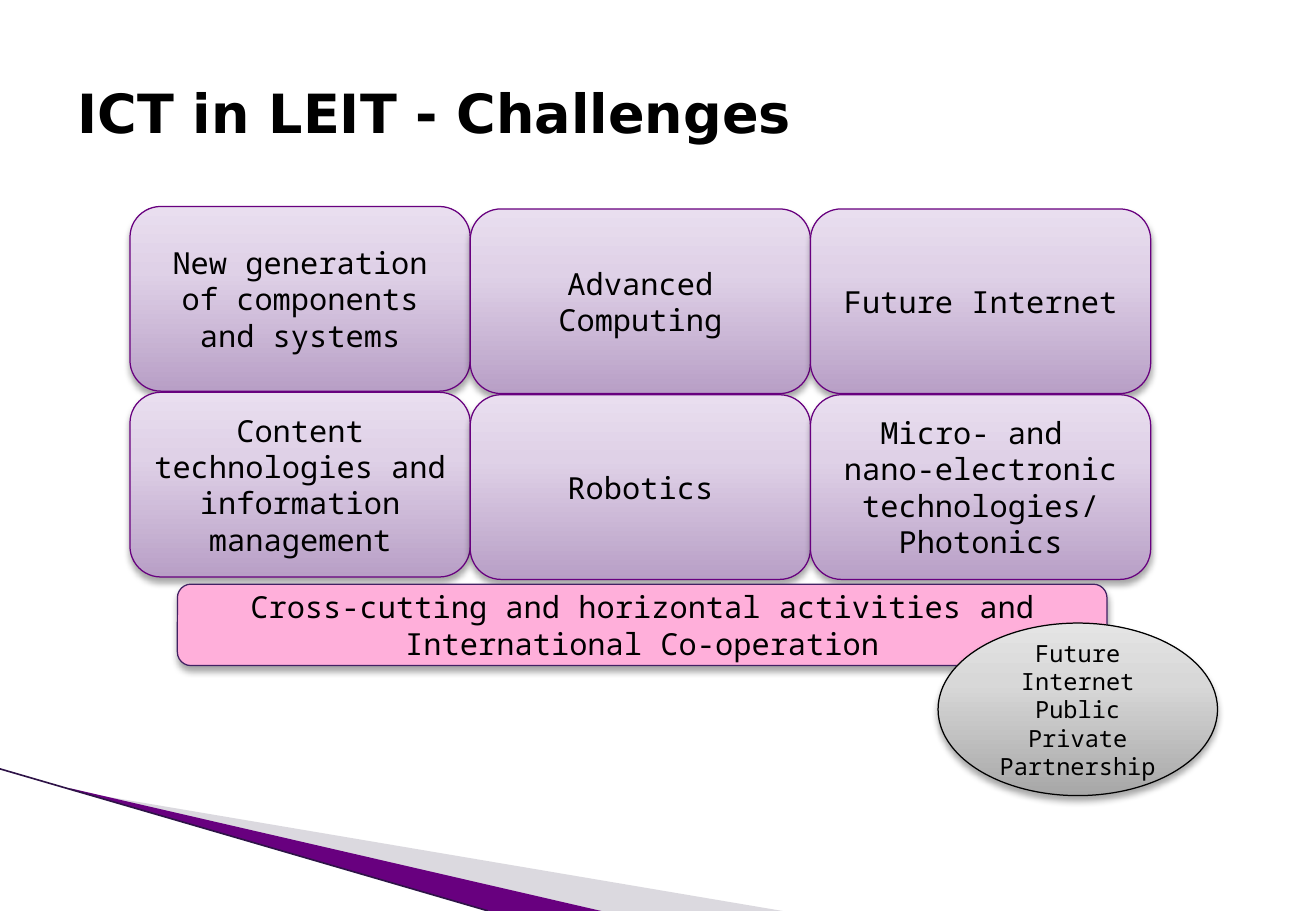
from pptx import Presentation
from pptx import util as u
from pptx.dml.color import RGBColor
from pptx.enum import shapes, text
from pptx.oxml import parse_xml
from pptx.oxml.ns import nsdecls, qn

COLORS = {"black": "000000", "purple": "68007F", "plum": "422163", "pink": "FFAFDA",
          "grey": "A7A2B1", "edge": "2E1347"}
LILAC = [(0, "B89FC6"), (65, "DFD1E7"), (100, "E9DEEF")]
SILVER = [(0, "A7A7A7"), (65, "D8D8D8"), (100, "E4E4E4")]
BODY = {"size": u.Pt(18), "name": "Noto Sans Mono"}
SMALL = {**BODY, "size": u.Pt(14)}
TITLE = {"size": u.Pt(32), "name": "DejaVu Sans", "bold": True}
ROUND = shapes.MSO_SHAPE.ROUNDED_RECTANGLE
OVAL = shapes.MSO_SHAPE.OVAL


class Deck:
    """Draws styled elements on the current slide."""

    def __init__(self, width, height):
        self.prs = Presentation()
        self.prs.slide_width, self.prs.slide_height = u.Inches(width), u.Inches(height)
        self.s = self.prs.slides.add_slide(self.prs.slide_layouts[6])

    def rgb(self, name):
        return RGBColor.from_string(COLORS[name])

    def add_text(self, sp, lines, fmt, align):
        tf = sp.text_frame
        tf.word_wrap = True
        tf.vertical_anchor = text.MSO_ANCHOR.MIDDLE
        for i, line in enumerate(lines):
            p = tf.add_paragraph() if i else tf.paragraphs[0]
            p.alignment = align
            r = p.add_run()
            r.text = line
            for key, value in fmt.items():
                setattr(r.font, key, value)
            r.font.color.rgb = self.rgb("black")

    def title(self, box, line):
        sp = self.s.shapes.add_textbox(*map(u.Inches, box))
        self.add_text(sp, [line], TITLE, text.PP_ALIGN.LEFT)

    def block(self, kind, box, lines, fill, line, fmt=BODY):
        sp = self.s.shapes.add_shape(kind, *map(u.Inches, box))
        if isinstance(fill, str):
            sp.fill.solid()
            sp.fill.fore_color.rgb = self.rgb(fill)
        else:
            self.gradient(sp, fill)
        sp.line.color.rgb = self.rgb(line)
        sp.line.width = u.Pt(0.75)
        self.drop_shadow(sp)
        self.add_text(sp, lines, fmt, text.PP_ALIGN.CENTER)

    def gradient(self, sp, stops):
        gs = "".join(f'<a:gs pos="{pos * 1000}"><a:srgbClr val="{c}"/></a:gs>' for pos, c in stops)
        sp._element.spPr.insert(2, parse_xml(
            f'<a:gradFill {nsdecls("a")} rotWithShape="1"><a:gsLst>{gs}</a:gsLst>'
            '<a:lin ang="16200000" scaled="0"/></a:gradFill>'))

    def drop_shadow(self, sp):
        sp.shadow.inherit = False
        sp._element.spPr.find(qn("a:effectLst")).append(parse_xml(
            f'<a:outerShdw {nsdecls("a")} blurRad="{u.Pt(4)}" dist="{u.Pt(3)}" dir="5400000" '
            'rotWithShape="0"><a:srgbClr val="000000"><a:alpha val="35000"/></a:srgbClr></a:outerShdw>'))

    def wedge(self, points, color, alpha=100):
        start, *rest = [tuple(map(u.Inches, pt)) for pt in points]
        fb = self.s.shapes.build_freeform(*start)
        fb.add_line_segments(rest, close=True)
        sp = fb.convert_to_shape()
        sp.fill.solid()
        sp.fill.fore_color.rgb = self.rgb(color)
        sp.line.fill.background()
        sp.shadow.inherit = False
        if alpha < 100:
            clr = sp._element.spPr.find(qn("a:solidFill"))[0]
            clr.append(parse_xml(f'<a:alpha {nsdecls("a")} val="{alpha * 1000}"/>'))

    def line(self, ends, color, width):
        cx = self.s.shapes.add_connector(shapes.MSO_CONNECTOR.STRAIGHT, *map(u.Inches, ends))
        cx.line.color.rgb = self.rgb(color)
        cx.line.width = u.Pt(width)
        cx._element.spPr.append(parse_xml(f'<a:effectLst {nsdecls("a")}/>'))


def main():
    d = Deck(10.83, 7.5)
    d.wedge([(0.59, 6.51), (6.44, 7.5), (4.94, 7.5), (0.59, 6.5)], "grey", 40)
    d.wedge([(0.58, 6.49), (4.95, 7.5), (4.03, 7.5), (0.58, 6.5)], "purple")
    d.line((0, 6.33, 4.02, 7.5), "edge", 0.95)
    d.title((0.54, 0.3, 8.54, 1.25), "ICT in LEIT - Challenges")

    challenges = [
        [["New generation of components and systems"], ["Advanced Computing"], ["Future Internet"]],
        [["Content technologies and information management"], ["Robotics"],
         ["Micro- and ", "nano-electronic technologies/", "Photonics"]],
    ]
    for row, cells in enumerate(challenges):
        for col, lines in enumerate(cells):
            top = (1.72 if col else 1.7) + 1.53 * row
            d.block(ROUND, (1.07 + 2.8 * col, top, 2.8, 1.52), lines, LILAC, "purple")

    d.block(ROUND, (1.46, 4.81, 7.65, 0.67),
            ["Cross-cutting and horizontal activities and International Co-operation"], "pink", "plum")
    d.block(OVAL, (7.72, 5.13, 2.3, 1.42),
            ["Future Internet Public Private Partnership"], SILVER, "black", SMALL)
    d.prs.save("out.pptx")


if __name__ == "__main__":
    main()
